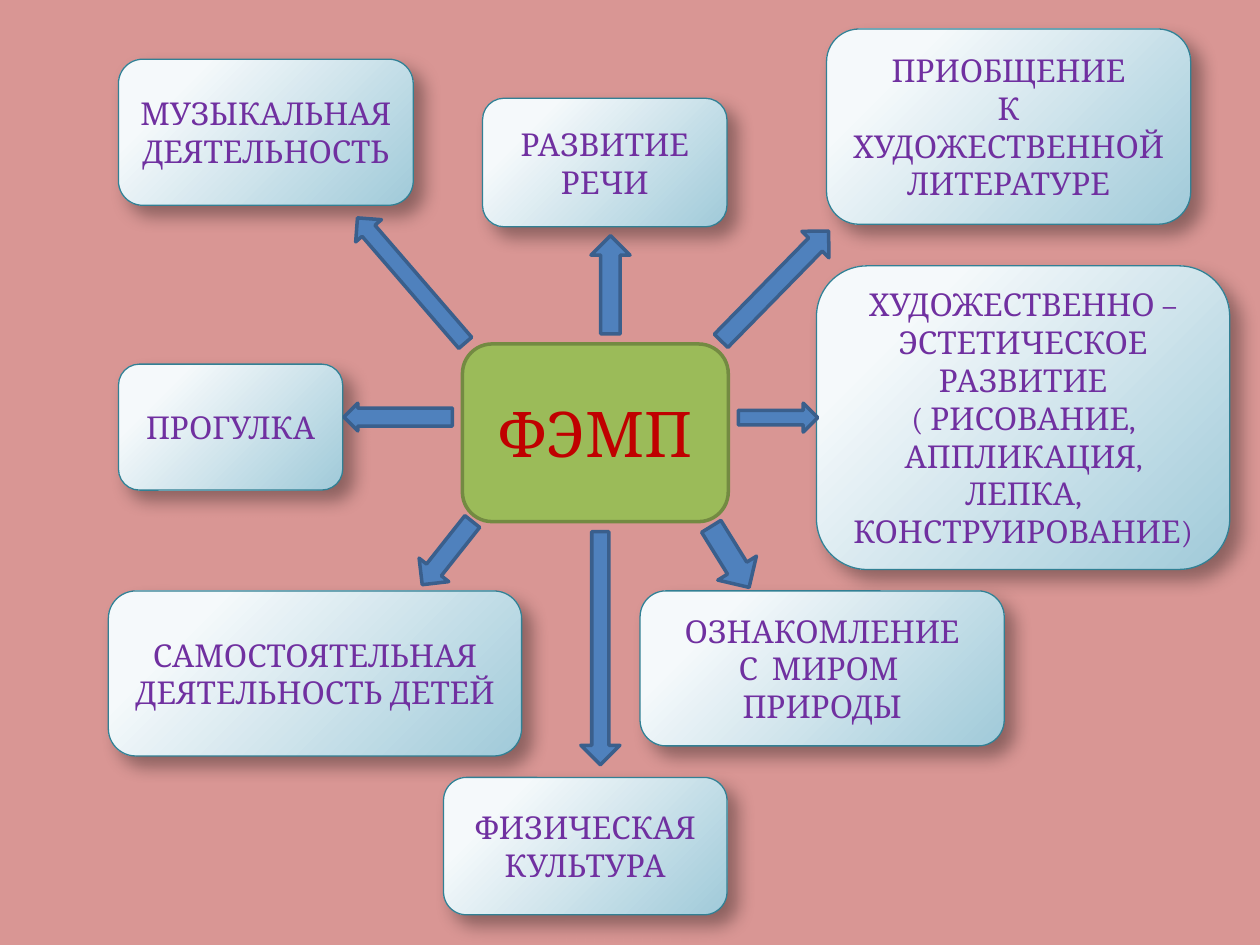
"""Builds a slide that links ФЭМП to eight kinds of children's activity."""
from dataclasses import dataclass

from pptx import Presentation
from pptx import oxml as ox
from pptx import util as u
from pptx.dml.color import RGBColor
from pptx.enum import shapes, text
from pptx.oxml import ns

KIND = shapes.MSO_SHAPE


@dataclass(frozen=True)
class Theme:
    font: str = "Cambria"
    background: str = "D99694"
    hub: tuple = ("9BBB59", "738A42", 2)
    arrow: tuple = ("4F81BD", "3A5F8C", 2)
    topic: tuple = ("F5F9FB", "328094", 0.75)
    topic_end: str = "A0CAD9"
    shadow: str = "000000"
    hub_text: tuple = ("C00000", 36)
    topic_text: tuple = ("7030A0", 18)


THEME = Theme()

TOPICS = [
    ((3.83, 0.78, 1.94, 1.02), ["РАЗВИТИЕ РЕЧИ"]),
    ((0.94, 0.47, 2.34, 1.16), ["МУЗЫКАЛЬНАЯ ДЕЯТЕЛЬНОСТЬ"]),
    ((0.94, 2.89, 1.78, 1), ["ПРОГУЛКА"]),
    ((6.56, 0.23, 2.89, 1.55), ["ПРИОБЩЕНИЕ", "К ХУДОЖЕСТВЕННОЙ ЛИТЕРАТУРЕ"]),
    ((6.48, 2.11, 3.28, 2.41), ["ХУДОЖЕСТВЕННО – ЭСТЕТИЧЕСКОЕ РАЗВИТИЕ",
                                "( РИСОВАНИЕ, АППЛИКАЦИЯ, ЛЕПКА, КОНСТРУИРОВАНИЕ)"]),
    ((5.08, 4.69, 2.89, 1.23), ["ОЗНАКОМЛЕНИЕ\vС  МИРОМ  ПРИРОДЫ"]),
    ((0.86, 4.69, 3.28, 1.31), ["САМОСТОЯТЕЛЬНАЯ\vДЕЯТЕЛЬНОСТЬ ДЕТЕЙ"]),
    ((3.52, 6.17, 2.25, 1.09), ["ФИЗИЧЕСКАЯ КУЛЬТУРА"]),
]

ARROWS = [
    (KIND.UP_ARROW, (4.69, 1.87, 0.31, 0.78), 0, 0.5),
    (KIND.UP_ARROW, (3.13, 1.57, 0.27, 1.31), 319.2, 0.5),
    (KIND.LEFT_ARROW, (2.73, 3.2, 0.86, 0.22), 0, 0.65),
    (KIND.RIGHT_ARROW, (5.54, 2.12, 1.22, 0.3), 314.4, 0.5),
    (KIND.RIGHT_ARROW, (5.86, 3.2, 0.63, 0.23), 0, 0.5),
    (KIND.DOWN_ARROW, (3.4, 4.07, 0.3, 0.64), 38.4, 0.5),
    (KIND.RIGHT_ARROW, (5.51, 4.24, 0.57, 0.36), 58.2, 0.5),
    (KIND.DOWN_ARROW, (4.61, 4.22, 0.31, 1.85), 0, 0.44),
]


def rgb(value):
    """Return a colour from its hex digits."""
    return RGBColor.from_string(value)


def set_attrs(target, formats):
    """Set each named attribute on the target."""
    for name, value in formats.items():
        setattr(target, name, value)


def add_shape(s, kind, box, look):
    """Add a flat shape with the given fill, line colour and line width."""
    fill, line, width = look
    sp = s.shapes.add_shape(kind, *map(u.Inches, box))
    sp.shadow.inherit = False
    sp.fill.solid()
    sp.fill.fore_color.rgb = rgb(fill)
    sp.line.color.rgb = rgb(line)
    sp.line.width = u.Pt(width)
    return sp


def write_text(sp, paragraphs, style):
    """Write centred paragraphs into a shape."""
    color, size = style
    tf = sp.text_frame
    set_attrs(tf, {"word_wrap": True, "vertical_anchor": text.MSO_ANCHOR.MIDDLE})
    for i, words in enumerate(paragraphs):
        p = tf.add_paragraph() if i else tf.paragraphs[0]
        p.text = words
        p.alignment = text.PP_ALIGN.CENTER
        for r in p.runs:
            set_attrs(r.font, {"name": THEME.font, "size": u.Pt(size)})
            r.font.color.rgb = rgb(color)


def add_glow(sp):
    """Give a shape a circular gradient and a soft shadow."""
    props = sp._element.spPr
    gradient = ox.parse_xml(
        f'<a:gradFill {ns.nsdecls("a")} rotWithShape="1"><a:gsLst>'
        f'<a:gs pos="20000"><a:srgbClr val="{THEME.topic[0]}"/></a:gs>'
        f'<a:gs pos="100000"><a:srgbClr val="{THEME.topic_end}"/></a:gs></a:gsLst>'
        '<a:path path="circle"><a:fillToRect l="-15000" t="-15000" r="115000" b="115000"/>'
        '</a:path></a:gradFill>')
    props.replace(props.find(ns.qn("a:solidFill")), gradient)
    props.find(ns.qn("a:effectLst")).append(ox.parse_xml(
        f'<a:outerShdw {ns.nsdecls("a")} blurRad="{u.Pt(10.2)}" dist="{u.Pt(8)}" '
        'dir="2700000" algn="tl" rotWithShape="0">'
        f'<a:srgbClr val="{THEME.shadow}"><a:alpha val="35000"/></a:srgbClr></a:outerShdw>'))


def add_hub(s, box, words):
    """Add the central block."""
    sp = add_shape(s, KIND.ROUNDED_RECTANGLE, box, THEME.hub)
    write_text(sp, [words], THEME.hub_text)


def add_topic(s, box, paragraphs):
    """Add one activity block."""
    sp = add_shape(s, KIND.ROUNDED_RECTANGLE, box, THEME.topic)
    add_glow(sp)
    write_text(sp, paragraphs, THEME.topic_text)


def add_arrow(s, kind, box, rotation, shaft):
    """Add a block arrow with the given turn and shaft thickness."""
    sp = add_shape(s, kind, box, THEME.arrow)
    sp.rotation = rotation
    sp.adjustments[0] = shaft


def main():
    """Build and save the slide."""
    prs = Presentation()
    set_attrs(prs, {"slide_width": u.Inches(10), "slide_height": u.Inches(7.5)})
    s = prs.slides.add_slide(prs.slide_layouts[6])
    s.background.fill.solid()
    s.background.fill.fore_color.rgb = rgb(THEME.background)
    add_hub(s, (3.67, 2.73, 2.11, 1.41), "ФЭМП")
    for topic in TOPICS:
        add_topic(s, *topic)
    for arrow in ARROWS:
        add_arrow(s, *arrow)
    prs.save("out.pptx")


if __name__ == "__main__":
    main()
